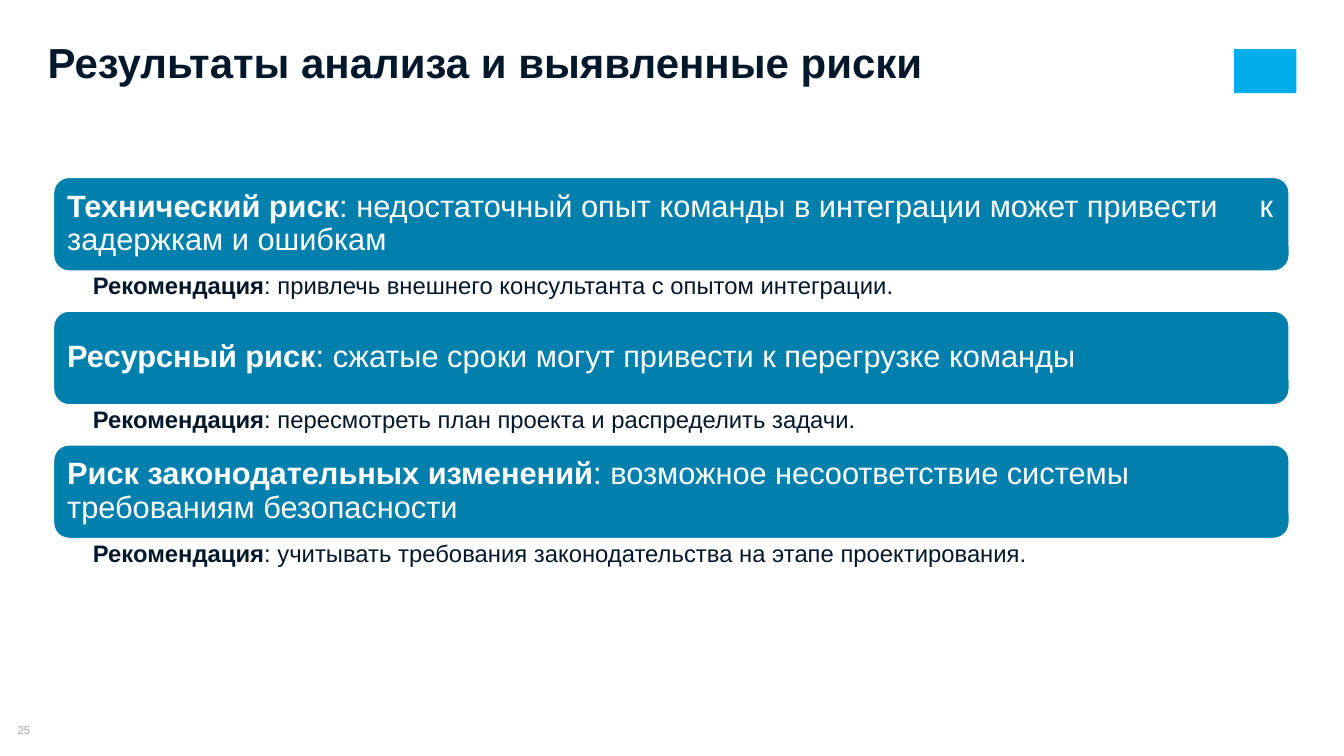
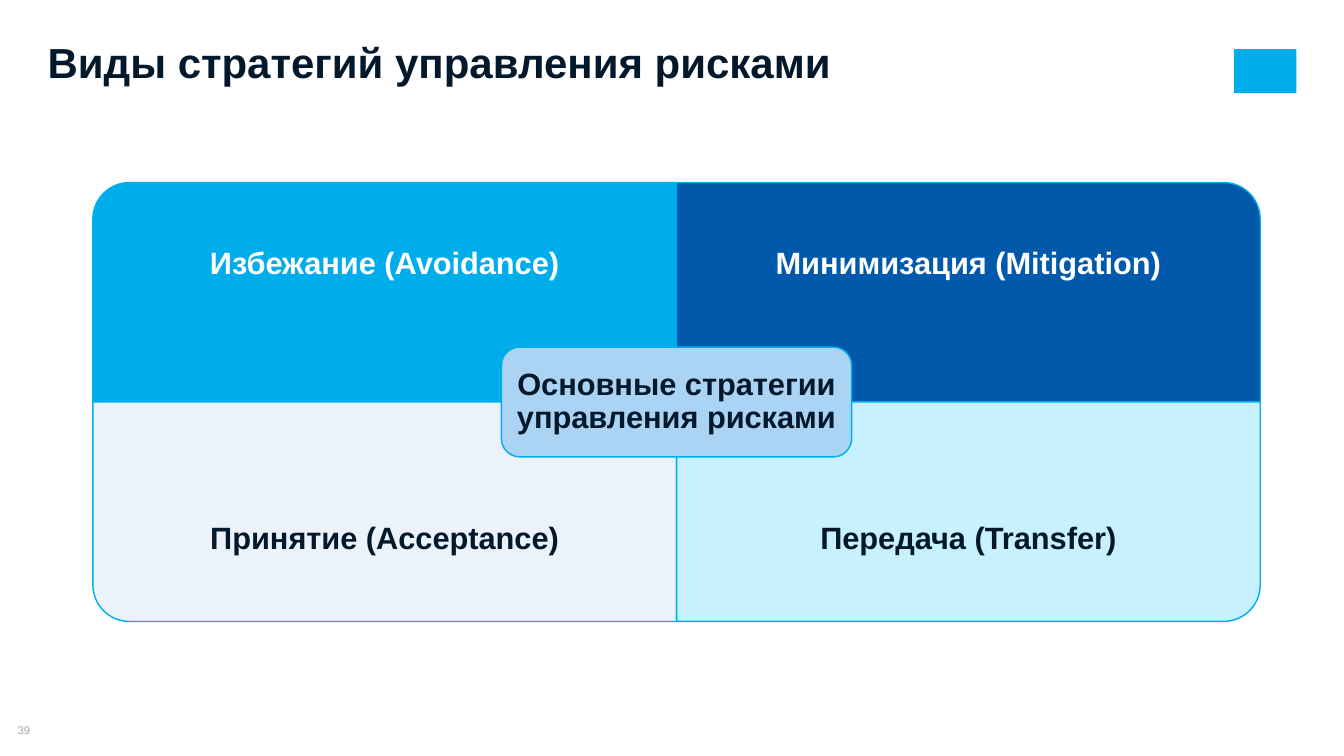
from lxml import etree
from pptx import Presentation
from pptx.dml.color import RGBColor
from pptx.enum.shapes import MSO_SHAPE
from pptx.enum.text import MSO_ANCHOR, PP_ALIGN
from pptx.oxml.ns import qn
from pptx.util import Cm, Pt

WHITE = RGBColor(0xFF, 0xFF, 0xFF)
INK = RGBColor(0x03, 0x18, 0x2B)
GREY = RGBColor(0xA6, 0xA6, 0xA6)
SKY = RGBColor(0x00, 0xAD, 0xEB)
TEAL = RGBColor(0x01, 0x7F, 0xAD)
NAVY = RGBColor(0x00, 0x59, 0xAA)
PALE = RGBColor(0xEC, 0xF2, 0xF9)
ICE = RGBColor(0xC7, 0xF1, 0xFF)
MIST = RGBColor(0xAB, 0xD3, 0xF3)

RECT = MSO_SHAPE.RECTANGLE
ROUND = MSO_SHAPE.ROUNDED_RECTANGLE
CORNER = MSO_SHAPE.ROUND_1_RECTANGLE
TOP, MIDDLE = MSO_ANCHOR.TOP, MSO_ANCHOR.MIDDLE
LEFT, CENTER = PP_ALIGN.LEFT, PP_ALIGN.CENTER
FONT = "Arial"

RISKS = [
    ("Технический риск",
     ": недостаточный опыт команды в интеграции может привести\tк задержкам и ошибкам",
     ": привлечь внешнего консультанта с опытом интеграции."),
    ("Ресурсный риск",
     ": сжатые сроки могут привести к перегрузке команды",
     ": пересмотреть план проекта и распределить задачи."),
    ("Риск законодательных изменений",
     ": возможное несоответствие системы требованиям безопасности",
     ": учитывать требования законодательства на этапе проектирования."),
]
ADVICE = "Рекомендация"

PLANS = [
    ("Избежание (Avoidance)", 0, 0, 270, SKY, WHITE),
    ("Минимизация (Mitigation)", 1, 0, 0, NAVY, WHITE),
    ("Принятие (Acceptance)", 0, 1, 180, PALE, INK),
    ("Передача (Transfer)", 1, 1, 90, ICE, INK),
]
CORE = "Основные стратегии управления рисками"


def write(shape, text, size=22, color=INK, bold=True, tail="", align=LEFT,
          anchor=MIDDLE, inset=(0, 0, 0, 0), space=0.9, tab=None):
    frame = shape.text_frame
    frame.word_wrap = True
    frame.vertical_anchor = anchor
    (frame.margin_left, frame.margin_top,
     frame.margin_right, frame.margin_bottom) = [Cm(side) for side in inset]
    para = frame.paragraphs[0]
    para.alignment = align
    para.line_spacing = space
    if tab:
        tabs = etree.SubElement(para._p.get_or_add_pPr(), qn("a:tabLst"))
        etree.SubElement(tabs, qn("a:tab"), pos=str(Cm(tab)), algn="l")
    for part, heavy in ((text, bold), (tail, False)):
        if part:
            run = para.add_run()
            run.text = part
            font = run.font
            font.name, font.size, font.bold = FONT, Pt(size), heavy
            font.color.rgb = color


def label(slide, area, text, **style):
    write(slide.shapes.add_textbox(*map(Cm, area)), text, **style)


def block(slide, kind, area, fill, line=None, turn=0):
    x, y, w, h = area
    if turn % 180:
        x, y, w, h = x + (w - h) / 2, y + (h - w) / 2, h, w
    shape = slide.shapes.add_shape(kind, Cm(x), Cm(y), Cm(w), Cm(h))
    shape.rotation = turn
    shape.shadow.inherit = False
    shape.fill.solid()
    shape.fill.fore_color.rgb = fill
    if line is None:
        shape.line.fill.background()
    else:
        shape.line.color.rgb = line
        shape.line.width = Pt(1)
    return shape


def page(deck, title, number):
    slide = deck.slides.add_slide(deck.slide_layouts[6])
    block(slide, RECT, (31.1, 1.24, 1.57, 1.11), SKY)
    label(slide, (0, 18.24, 1.2, 0.33), number, size=8, color=GREY,
          bold=False, align=CENTER, space=1.0)
    label(slide, (1.2, 1.17, 26.7, 1.04), title, size=30, anchor=TOP, space=0.8)
    return slide


def risks(deck):
    slide = page(deck, "Результаты анализа и выявленные риски", "25")
    x, y, wide, high, note = 1.35, 4.47, 31.14, 2.36, 1.01
    for row, (name, risk, advice) in enumerate(RISKS):
        top = y + row * (high + note)
        bar = block(slide, ROUND, (x, top, wide, high), TEAL, WHITE)
        write(bar, name, tail=risk, color=WHITE, inset=(0.23,) * 4,
              tab=30.05 if "\t" in risk else None)
        label(slide, (x, top + high, wide, note), ADVICE, tail=advice, size=17,
              anchor=TOP, inset=(0.99, 0.08, 0.43, 0.08))


def plans(deck):
    slide = page(deck, "Виды стратегий управления рисками", "39")
    x, y, wide, high = 2.34, 4.6, 14.71, 5.53
    part = high * 0.75
    for text, col, row, turn, fill, color in PLANS:
        left, top = x + col * wide, y + row * high
        block(slide, CORNER, (left, top, wide, high), fill, SKY, turn)
        label(slide, (left, top + row * (high - part), wide, part), text,
              color=color, align=CENTER, inset=(0.43,) * 4)
    w, h = wide * 0.6, high / 2
    core = block(slide, ROUND, (x + wide - w / 2, y + high - h / 2, w, h), MIST, SKY)
    write(core, CORE, align=CENTER, inset=(0.23,) * 4)


def main():
    deck = Presentation()
    deck.slide_width, deck.slide_height = Cm(33.87), Cm(19.05)
    risks(deck)
    plans(deck)
    deck.save("out.pptx")


if __name__ == "__main__":
    main()
